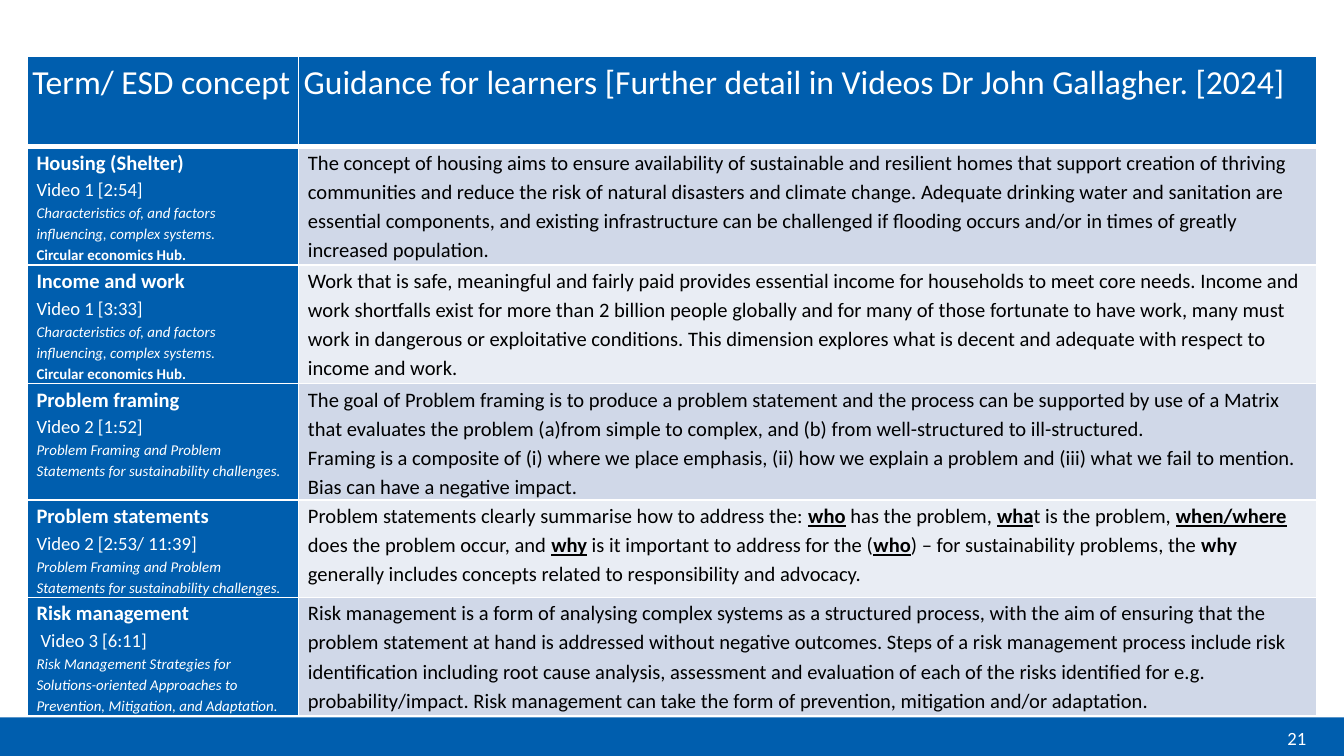
"""Build a slide with a table of ESD concepts and guidance for learners."""
from dataclasses import dataclass
from typing import NamedTuple

import lxml.etree
import pptx
import pptx.dml.color
import pptx.enum.shapes
import pptx.enum.text
import pptx.oxml.ns
import pptx.util
from pptx.util import Cm

BLUE = pptx.dml.color.RGBColor(0x00, 0x5E, 0xAE)
WHITE = pptx.dml.color.RGBColor(0xFF, 0xFF, 0xFF)
BLACK = pptx.dml.color.RGBColor(0x00, 0x00, 0x00)
BAND_DARK = pptx.dml.color.RGBColor(0xD0, 0xD8, 0xE8)
BAND_LIGHT = pptx.dml.color.RGBColor(0xE9, 0xED, 0xF4)

FONT = "Calibri"
SLIDE_WIDTH, SLIDE_HEIGHT = 25.4, 14.29
BAR_TOP = 13.56
COLUMN_WIDTHS = (5.13, 19.25)
HEADER_HEIGHT = 1.7
HEADINGS = (
    "Term/ ESD concept",
    "Guidance for learners [Further detail in Videos Dr John Gallagher. [2024]",
)


class Fragment(NamedTuple):
    text: str
    bold: bool = False
    underline: bool = False


@dataclass
class Concept:
    term: str
    video: str
    topic: str
    guidance: list[list[Fragment]]
    height: float
    source: str = ""
    space_after: int = 0


def key(text: str) -> Fragment:
    return Fragment(text, bold=True, underline=True)


COMPLEX_SYSTEMS = "Characteristics of, and factors influencing, complex systems."
FRAMING = "Problem Framing and Problem Statements for sustainability challenges."
LAB = "Circular economics Hub."

CONCEPTS = [
    Concept("Housing (Shelter)", "Video 1 [2:54]", COMPLEX_SYSTEMS, [[Fragment(
        "The concept of housing aims to ensure availability of sustainable and resilient homes "
        "that support creation of thriving communities and reduce the risk of natural disasters "
        "and climate change. Adequate drinking water and sanitation are essential components, "
        "and existing infrastructure can be challenged if flooding occurs and/or in times of "
        "greatly increased population.")]], 2.08, LAB, 6),
    Concept("Income and work", "Video 1 [3:33]", COMPLEX_SYSTEMS, [[Fragment(
        "Work that is safe, meaningful and fairly paid provides essential income for households "
        "to meet core needs. Income and work shortfalls exist for more than 2 billion people "
        "globally and for many of those fortunate to have work, many must work in dangerous or "
        "exploitative conditions. This dimension explores what is decent and adequate with "
        "respect to income and work.")]], 1.83, LAB),
    Concept("Problem framing", "Video 2 [1:52]", FRAMING, [
        [Fragment(
            "The goal of Problem framing is to produce a problem statement and the process can "
            "be supported by use of a Matrix that evaluates the problem (a)from simple to "
            "complex, and (b) from well-structured to ill-structured.")],
        [Fragment(
            "Framing is a composite of (i) where we place emphasis, (ii) how we explain a "
            "problem and (iii) what we fail to mention. Bias can have a negative impact.")],
    ], 2.06),
    Concept("Problem statements", "Video 2 [2:53/ 11:39]", FRAMING, [[
        Fragment("Problem statements clearly summarise how to address the: "),
        key("who"), Fragment(" has the problem, "),
        key("wha"), Fragment("t is the problem, "),
        key("when/where"), Fragment(" does the problem occur, and "),
        key("why"), Fragment(" is it important to address for the ("),
        key("who"), Fragment(") – for sustainability problems, the "),
        Fragment("why", bold=True),
        Fragment(" generally includes concepts related to responsibility and advocacy."),
    ]], 1.3),
    Concept(
        "Risk management", " Video 3 [6:11]",
        "Risk Management Strategies for Solutions-oriented Approaches to Prevention, "
        "Mitigation, and Adaptation.", [[Fragment(
            "Risk management is a form of analysing complex systems as a structured process, "
            "with the aim of ensuring that the problem statement at hand is addressed without "
            "negative outcomes. Steps of a risk management process include risk identification "
            "including root cause analysis, assessment and evaluation of each of the risks "
            "identified for e.g. probability/impact. Risk management can take the form of "
            "prevention, mitigation and/or adaptation.")]], 1.93, space_after=6),
]


def add_text(paragraph, text: str, *, size: int, color=WHITE, bold: bool = False,
             italic: bool = False, underline: bool = False) -> None:
    run = paragraph.add_run()
    run.text = text
    font = run.font
    font.name, font.size = FONT, pptx.util.Pt(size)
    font.bold, font.italic, font.underline = bold, italic, underline
    font.color.rgb = color


def next_paragraph(text_frame, space_after: int = 0):
    first = text_frame.paragraphs[0]
    paragraph = text_frame.add_paragraph() if first.runs else first
    paragraph.line_spacing = 1.15
    paragraph.space_before = pptx.util.Pt(0)
    paragraph.space_after = pptx.util.Pt(space_after)
    return paragraph


def format_cell(cell, fill, side_margin: float, bottom_line: int = 1) -> None:
    cell.margin_left = cell.margin_right = Cm(side_margin)
    cell.margin_top = cell.margin_bottom = Cm(0)
    cell.fill.solid()
    cell.fill.fore_color.rgb = fill
    properties = cell._tc.get_or_add_tcPr()
    widths = {"a:lnL": 1, "a:lnR": 1, "a:lnT": 1, "a:lnB": bottom_line}
    for index, (tag, width) in enumerate(widths.items()):
        line = lxml.etree.Element(pptx.oxml.ns.qn(tag), w=str(pptx.util.Pt(width)))
        solid = lxml.etree.SubElement(line, pptx.oxml.ns.qn("a:solidFill"))
        lxml.etree.SubElement(solid, pptx.oxml.ns.qn("a:srgbClr"), val=str(WHITE))
        properties.insert(index, line)


def fill_concept(table, row: int, concept: Concept) -> None:
    table.rows[row].height = Cm(concept.height)
    term_cell, guidance_cell = table.cell(row, 0), table.cell(row, 1)
    format_cell(term_cell, BLUE, 0.18)
    format_cell(guidance_cell, BAND_DARK if row % 2 else BAND_LIGHT, 0.18)

    frame = term_cell.text_frame
    add_text(next_paragraph(frame), concept.term, size=11, bold=True)
    add_text(next_paragraph(frame), concept.video, size=10)
    add_text(next_paragraph(frame), concept.topic, size=8, italic=True)
    if concept.source:
        add_text(next_paragraph(frame, concept.space_after), concept.source, size=8, bold=True)

    for fragments in concept.guidance:
        paragraph = next_paragraph(guidance_cell.text_frame, concept.space_after)
        for fragment in fragments:
            add_text(paragraph, fragment.text, size=11, color=BLACK,
                     bold=fragment.bold, underline=fragment.underline)


def add_footer_bar(slide) -> None:
    bar = slide.shapes.add_shape(
        pptx.enum.shapes.MSO_SHAPE.RECTANGLE,
        Cm(0), Cm(BAR_TOP), Cm(SLIDE_WIDTH), Cm(SLIDE_HEIGHT - BAR_TOP))
    bar.shadow.inherit = False
    bar.fill.solid()
    bar.fill.fore_color.rgb = BLUE
    bar.line.fill.background()


def add_concept_table(slide) -> None:
    height = HEADER_HEIGHT + sum(concept.height for concept in CONCEPTS)
    table = slide.shapes.add_table(
        len(CONCEPTS) + 1, len(HEADINGS),
        Cm(0.51), Cm(1.07), Cm(sum(COLUMN_WIDTHS)), Cm(height)).table
    table.rows[0].height = Cm(HEADER_HEIGHT)
    for column, (heading, width) in enumerate(zip(HEADINGS, COLUMN_WIDTHS)):
        table.columns[column].width = Cm(width)
        cell = table.cell(0, column)
        format_cell(cell, BLUE, 0.1, bottom_line=3)
        add_text(next_paragraph(cell.text_frame, 10), heading, size=18)
    for row, concept in enumerate(CONCEPTS, start=1):
        fill_concept(table, row, concept)


def add_slide_number(slide, number: str) -> None:
    frame = slide.shapes.add_textbox(Cm(24.08), Cm(13.67), Cm(1.04), Cm(0.61)).text_frame
    frame.word_wrap = True
    frame.vertical_anchor = pptx.enum.text.MSO_ANCHOR.BOTTOM
    add_text(frame.paragraphs[0], number, size=10)


def main() -> None:
    presentation = pptx.Presentation()
    presentation.slide_width, presentation.slide_height = Cm(SLIDE_WIDTH), Cm(SLIDE_HEIGHT)
    slide = presentation.slides.add_slide(presentation.slide_layouts[6])
    add_footer_bar(slide)
    add_concept_table(slide)
    add_slide_number(slide, "21")
    presentation.save("out.pptx")


if __name__ == "__main__":
    main()
